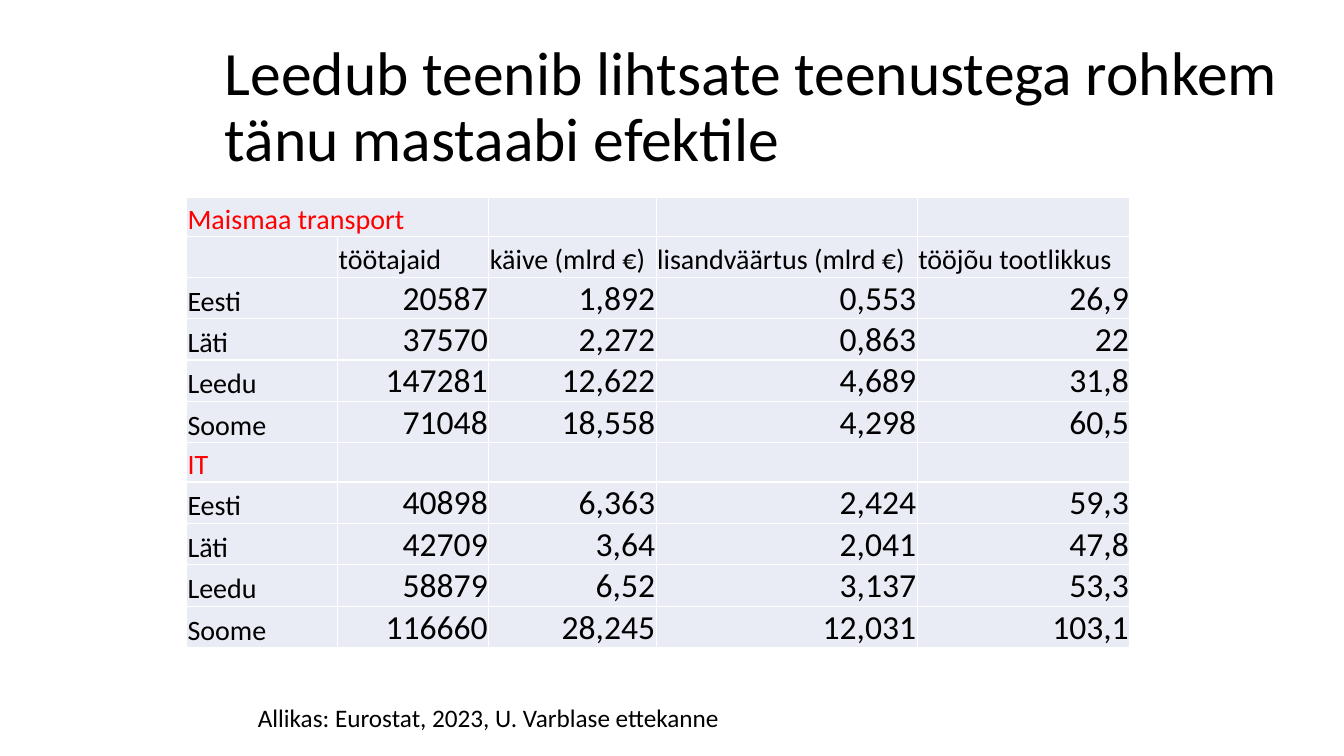
"""Builds a slide comparing land transport and IT across four countries."""
from lxml import etree
from pptx import Presentation
from pptx.dml.color import RGBColor
from pptx.enum.text import MSO_ANCHOR, PP_ALIGN
from pptx.oxml.ns import qn
from pptx.util import Pt

BLACK = RGBColor(0x00, 0x00, 0x00)
RED = RGBColor(0xFF, 0x00, 0x00)
WHITE = RGBColor(0xFF, 0xFF, 0xFF)
PALE_BLUE = RGBColor(0xE9, 0xEB, 0xF5)
TOP, MIDDLE, BOTTOM = MSO_ANCHOR.TOP, MSO_ANCHOR.MIDDLE, MSO_ANCHOR.BOTTOM
LEFT, RIGHT = PP_ALIGN.LEFT, PP_ALIGN.RIGHT

COLUMN_WIDTHS = (108, 108, 119.5, 186.5, 151.9)
ROW_HEIGHT = 28.1
HEADER_HEIGHT = 28.8
SECTIONS = ("Maismaa transport", "IT")
ROWS = (
    ("Maismaa transport", "", "", "", ""),
    ("", "töötajaid", "käive (mlrd €)", "lisandväärtus (mlrd €)", "tööjõu tootlikkus"),
    ("Eesti", "20587", "1,892", "0,553", "26,9"),
    ("Läti", "37570", "2,272", "0,863", "22"),
    ("Leedu", "147281", "12,622", "4,689", "31,8"),
    ("Soome", "71048", "18,558", "4,298", "60,5"),
    ("IT", "", "", "", ""),
    ("Eesti", "40898", "6,363", "2,424", "59,3"),
    ("Läti", "42709", "3,64", "2,041", "47,8"),
    ("Leedu", "58879", "6,52", "3,137", "53,3"),
    ("Soome", "116660", "28,245", "12,031", "103,1"),
)


class SlideBuilder:
    def __init__(self, slide, font_name):
        self.slide = slide
        self.font_name = font_name

    def run(self, paragraph, text, size, color=BLACK):
        run = paragraph.add_run()
        run.text = text
        run.font.name = self.font_name
        run.font.size = Pt(size)
        run.font.color.rgb = color

    def text(self, left, top, width, height, text, size, anchor=TOP, spacing=1.0):
        box = self.slide.shapes.add_textbox(Pt(left), Pt(top), Pt(width), Pt(height))
        frame = box.text_frame
        frame.word_wrap = True
        frame.vertical_anchor = anchor
        paragraph = frame.paragraphs[0]
        paragraph.line_spacing = spacing
        self.run(paragraph, text, size)

    def borders(self, cell, color, width):
        properties = cell._tc.get_or_add_tcPr()
        for side in ("a:lnL", "a:lnR", "a:lnT", "a:lnB"):
            line = etree.SubElement(properties, qn(side), w=str(Pt(width)))
            fill = etree.SubElement(line, qn("a:solidFill"))
            etree.SubElement(fill, qn("a:srgbClr"), val=str(color))

    def cell(self, cell, text, size, color, alignment):
        cell.margin_left = cell.margin_right = cell.margin_top = Pt(0.75)
        cell.margin_bottom = Pt(0)
        cell.vertical_anchor = BOTTOM
        self.borders(cell, WHITE, 1)
        cell.fill.solid()
        cell.fill.fore_color.rgb = PALE_BLUE
        if text:
            paragraph = cell.text_frame.paragraphs[0]
            paragraph.alignment = alignment
            self.run(paragraph, text, size, color)

    def table(self, left, top, rows, widths, heights):
        table = self.slide.shapes.add_table(
            len(rows), len(widths), Pt(left), Pt(top), Pt(sum(widths)), Pt(sum(heights))
        ).table
        table.first_row = table.horz_banding = False
        for column, width in zip(table.columns, widths):
            column.width = Pt(width)
        for row, height in zip(table.rows, heights):
            row.height = Pt(height)
        for row_index, values in enumerate(rows):
            for column_index, text in enumerate(values):
                is_number = column_index > 0 and row_index > 1
                self.cell(
                    table.cell(row_index, column_index),
                    text,
                    24 if is_number else 20,
                    RED if text in SECTIONS else BLACK,
                    RIGHT if is_number else LEFT,
                )
        table.cell(0, 0).merge(table.cell(0, 1))


def main():
    presentation = Presentation()
    presentation.slide_width = Pt(960)
    presentation.slide_height = Pt(540)
    slide = presentation.slides.add_slide(presentation.slide_layouts[6])
    builder = SlideBuilder(slide, "Calibri")
    builder.text(
        153.4, 25.2, 828, 104.4,
        "Leedub teenib lihtsate teenustega rohkem tänu mastaabi efektile",
        44, MIDDLE, 0.9,
    )
    heights = [ROW_HEIGHT] * len(ROWS)
    heights[1] = HEADER_HEIGHT
    builder.table(133.2, 141.1, ROWS, COLUMN_WIDTHS, heights)
    builder.text(177.1, 498.2, 369.4, 28.8, "Allikas: Eurostat, 2023, U. Varblase ettekanne", 18)
    presentation.save("out.pptx")


if __name__ == "__main__":
    main()
